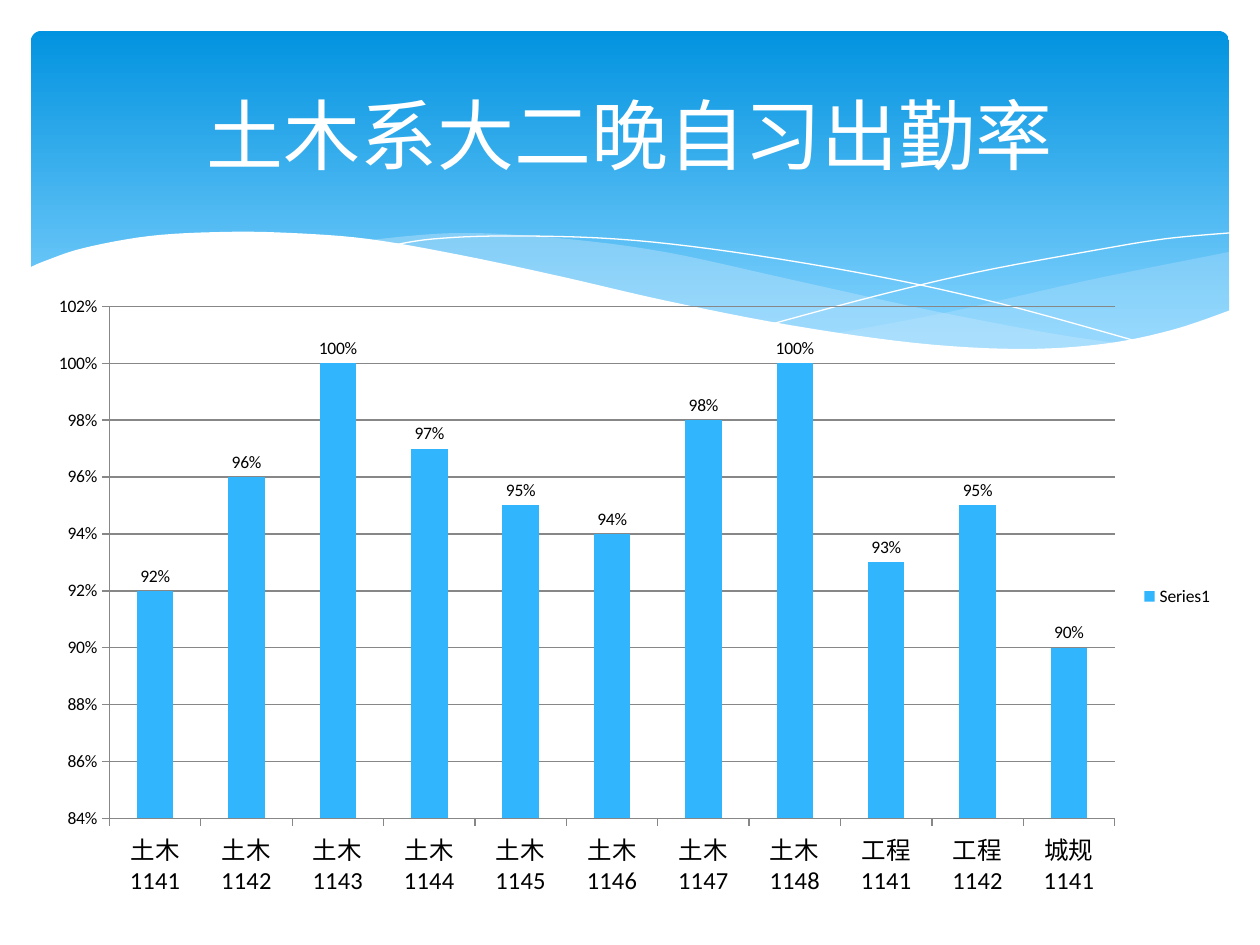
from pptx import Presentation
from pptx.chart.data import CategoryChartData
from pptx.dml.color import RGBColor
from pptx.enum.chart import XL_CHART_TYPE, XL_LABEL_POSITION, XL_LEGEND_POSITION, XL_TICK_MARK
from pptx.enum.shapes import MSO_SHAPE
from pptx.enum.text import MSO_ANCHOR, PP_ALIGN
from pptx.oxml.ns import qn
from pptx.util import Pt
from lxml import etree

COLUMNS = XL_CHART_TYPE.COLUMN_CLUSTERED
LABEL_ABOVE = XL_LABEL_POSITION.OUTSIDE_END
LEGEND_RIGHT = XL_LEGEND_POSITION.RIGHT
TICK_OUTSIDE = XL_TICK_MARK.OUTSIDE
ROUNDED = MSO_SHAPE.ROUNDED_RECTANGLE
MIDDLE = MSO_ANCHOR.MIDDLE
CENTER = PP_ALIGN.CENTER

EMU_PER_PX = 914400 / 126
FONT = "Calibri"
WHITE, BLACK, GREY = "FFFFFF", "000000", "878787"
BAR_BLUE, PALE_BLUE = "31B6FD", "C6E7FC"
CURVE_STEPS = 6

RIGHT_WAVE = [
    [(1229, 252), (1085, 281), (949, 312), (833, 334)],
    [(833, 334), (939, 347), (1026, 350), (1110, 344), (1178, 330), (1230, 311)],
]
MIDDLE_WAVE = [
    [(360, 241), (455, 233), (557, 238), (665, 252), (793, 280), (934, 311),
     (1055, 334), (1125, 344)],
    [(1125, 344), (1043, 350), (942, 348), (819, 333), (713, 312), (566, 280),
     (456, 256), (360, 241)],
]
FALLING_LINE = [[(389, 246), (433, 239), (505, 236), (616, 239), (733, 252),
                 (876, 276), (1002, 304), (1143, 343)]]
RISING_LINE = [[(772, 324), (876, 296), (978, 272), (1091, 251), (1164, 239),
                (1229, 233)]]
WHITE_WAVE = [
    [(1231, 310), (1172, 330), (1103, 344), (1019, 349), (915, 343), (789, 325),
     (667, 301), (563, 277), (460, 255), (368, 239), (290, 233), (223, 232),
     (150, 236), (84, 248), (45, 261), (29, 268)],
    [(29, 415), (1231, 415)],
]
ATTENDANCE = {
    "土木1141": 0.92, "土木1142": 0.96, "土木1143": 1, "土木1144": 0.97,
    "土木1145": 0.95, "土木1146": 0.94, "土木1147": 0.98, "土木1148": 1,
    "工程1141": 0.93, "工程1142": 0.95, "城规1141": 0.9,
}


def px(length):
    """Turn px into EMU."""
    return round(length * EMU_PER_PX)


def color(code):
    """Turn a hex string into a colour."""
    return RGBColor.from_string(code)


def smooth(points):
    """Return points along a Catmull-Rom curve through the given points."""
    padded = [points[0], *points, points[-1]]
    curve = [points[0]]
    for a, b, c, d in zip(padded, padded[1:], padded[2:], padded[3:]):
        for step in range(1, CURVE_STEPS + 1):
            t = step / CURVE_STEPS
            curve.append(tuple(
                (2 * q + (r - p) * t + (2 * p - 5 * q + 4 * r - s) * t ** 2
                 + (3 * q - p - 3 * r + s) * t ** 3) / 2
                for p, q, r, s in zip(a, b, c, d)))
    return curve


def add_curve(slide, pieces, fill=None, opacity=None, line=None):
    """Draw smooth pieces as a filled wave or an open hairline."""
    points = [(px(x), px(y)) for piece in pieces for x, y in smooth(piece)]
    builder = slide.shapes.build_freeform(*points[0], scale=1.0)
    builder.add_line_segments(points[1:], close=fill is not None)
    shape = builder.convert_to_shape()
    shape.shadow.inherit = False
    if fill:
        shape.fill.solid()
        shape.fill.fore_color.rgb = color(fill)
    else:
        shape.fill.background()
    if opacity:
        solid = shape.fill._xPr.find(qn("a:solidFill"))
        etree.SubElement(solid[0], qn("a:alpha"), val=str(opacity * 1000))
    if line:
        shape.line.color.rgb = color(line)
        shape.line.width = Pt(0)
    else:
        shape.line.fill.background()


def add_banner(slide, left, top, width, height):
    """Draw the rounded gradient panel."""
    shape = slide.shapes.add_shape(ROUNDED, px(left), px(top), px(width), px(height))
    shape.adjustments[0] = 0.03
    shape.shadow.inherit = False
    shape.line.fill.background()
    shape.fill.gradient()
    shape.fill.gradient_angle = 270
    stops = [(0, "0293E0"), (0.9, "83D3FE")]
    for stop, (position, code) in zip(shape.fill.gradient_stops, stops):
        stop.position = position
        stop.color.rgb = color(code)


def set_font(font, size, code):
    """Set the font, size and colour."""
    font.name = FONT
    font.size = Pt(size)
    font.color.rgb = color(code)


def add_text(slide, text, left, top, width, height, size=18, code=BLACK, align=CENTER):
    """Add a text box with one paragraph, centred in height."""
    box = slide.shapes.add_textbox(px(left), px(top), px(width), px(height))
    frame = box.text_frame
    frame.word_wrap = True
    frame.vertical_anchor = MIDDLE
    paragraph = frame.paragraphs[0]
    paragraph.alignment = align
    run = paragraph.add_run()
    run.text = text
    set_font(run.font, size, code)


def style_axis(axis, size):
    """Set the line, ticks and labels of an axis."""
    axis.major_tick_mark = TICK_OUTSIDE
    axis.format.line.color.rgb = color(GREY)
    set_font(axis.tick_labels.font, size, BLACK)


def add_attendance_chart(slide, left, top, width, height):
    """Add the column chart of attendance by class."""
    data = CategoryChartData(number_format="0%")
    data.categories = list(ATTENDANCE)
    data.add_series("Series1", list(ATTENDANCE.values()))
    frame = slide.shapes.add_chart(COLUMNS, px(left), px(top), px(width), px(height), data)
    chart = frame.chart
    chart.has_title = False
    set_font(chart.font, 10, BLACK)
    chart.has_legend = True
    chart.legend.position = LEGEND_RIGHT
    chart.legend.include_in_layout = False

    style_axis(chart.category_axis, 14)
    value_axis = chart.value_axis
    style_axis(value_axis, 10)
    value_axis.minimum_scale, value_axis.maximum_scale = 0.84, 1.02
    value_axis.major_unit = 0.02
    value_axis.major_gridlines.format.line.color.rgb = color(GREY)
    value_axis.tick_labels.number_format = "0%"
    value_axis.tick_labels.number_format_is_linked = False

    plot = chart.plots[0]
    plot.gap_width = 150
    plot.vary_by_categories = False
    series_fill = plot.series[0].format.fill
    series_fill.solid()
    series_fill.fore_color.rgb = color(BAR_BLUE)
    plot.has_data_labels = True
    labels = plot.data_labels
    labels.show_value = True
    labels.number_format = "0%"
    labels.number_format_is_linked = False
    labels.position = LABEL_ABOVE
    set_font(labels.font, 10, BLACK)


def main():
    """Build the slide."""
    presentation = Presentation()
    presentation.slide_width, presentation.slide_height = px(1260), px(945)
    slide = presentation.slides.add_slide(presentation.slide_layouts[6])
    add_banner(slide, 31, 31, 1198, 340)
    add_curve(slide, RIGHT_WAVE, fill=PALE_BLUE, opacity=29)
    add_curve(slide, MIDDLE_WAVE, fill=PALE_BLUE, opacity=40)
    add_curve(slide, FALLING_LINE, line=WHITE)
    add_curve(slide, RISING_LINE, line=WHITE)
    add_curve(slide, WHITE_WAVE, fill=WHITE)
    add_text(slide, "土木系大二晚自习出勤率", 63, 47, 1134, 173, size=44, code=WHITE)
    add_attendance_chart(slide, 35, 284, 1191, 625)
    presentation.save("out.pptx")


if __name__ == "__main__":
    main()
